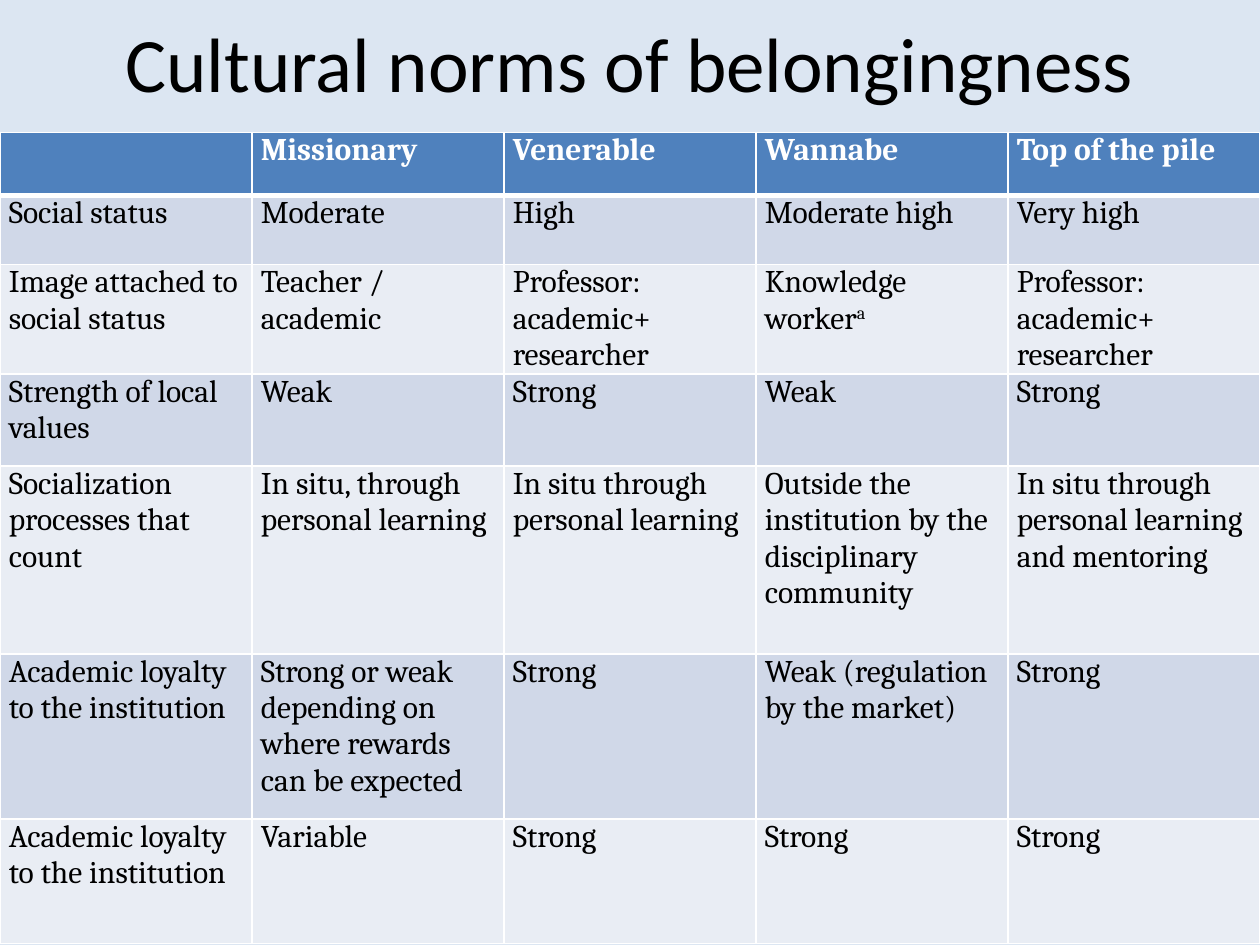
from lxml.etree import SubElement
from pptx import Presentation
from pptx.dml.color import RGBColor
from pptx.enum.text import MSO_ANCHOR, PP_ALIGN
from pptx.oxml.ns import qn
from pptx.util import Inches, Pt

TITLE = "Cultural norms of belongingness"
HEADER = ["", "Missionary", "Venerable", "Wannabe", "Top of the pile"]
# "^" starts a superscript
BODY = [
    ["Social status", "Moderate", "High", "Moderate high", "Very high"],
    ["Image attached to social status", "Teacher / academic",
     "Professor: academic+ researcher", "Knowledge worker^a",
     "Professor: academic+ researcher"],
    ["Strength of local values", "Weak", "Strong", "Weak", "Strong"],
    ["Socialization processes that count", "In situ, through personal learning",
     "In situ through personal learning",
     "Outside the institution by the disciplinary community",
     "In situ through personal learning and mentoring"],
    ["Academic loyalty to the institution",
     "Strong or weak depending on where rewards can be expected",
     "Strong", "Weak (regulation by the market)", "Strong"],
    ["Academic loyalty to the institution", "Variable", "Strong", "Strong", "Strong"],
]
ROWS = [HEADER] + BODY
ROW_HEIGHTS = [0.5, 0.55, 0.87, 0.73, 1.49, 1.31, 0.99]
COLUMN_WIDTH = 2

BACKGROUND = RGBColor(0xDC, 0xE6, 0xF2)
HEADER_BLUE = RGBColor(0x4F, 0x81, 0xBD)
BANDS = [RGBColor(0xD0, 0xD8, 0xE8), RGBColor(0xE9, 0xED, 0xF4)]
WHITE = RGBColor(0xFF, 0xFF, 0xFF)
BLACK = RGBColor(0, 0, 0)


def add_text(paragraph, text, font="Cambria", size=18, color=BLACK, bold=False):
    """Add text to a paragraph, raising whatever follows a "^"."""
    for position, part in enumerate(text.split("^")):
        run = paragraph.add_run()
        run.text = part
        run.font.name = font
        run.font.size = Pt(size)
        run.font.color.rgb = color
        run.font.bold = bold
        if position:
            run.font._element.set("baseline", "30000")


def set_borders(cell, top=1, bottom=1):
    properties = cell._tc.get_or_add_tcPr()
    for side, width in (("L", 1), ("R", 1), ("T", top), ("B", bottom)):
        line = SubElement(properties, qn(f"a:ln{side}"), w=str(Pt(width)))
        fill = SubElement(line, qn("a:solidFill"))
        SubElement(fill, qn("a:srgbClr"), val=str(WHITE))


def add_title(slide):
    title = slide.shapes.title
    title.left, title.top = Inches(0.5), Inches(0)
    title.width, title.height = Inches(9), Inches(0.98)
    title.text_frame.vertical_anchor = MSO_ANCHOR.MIDDLE
    paragraph = title.text_frame.paragraphs[0]
    paragraph.alignment = PP_ALIGN.CENTER
    add_text(paragraph, TITLE, font="Calibri", size=44)


def add_norms_table(slide):
    table = slide.shapes.add_table(
        len(ROWS), len(HEADER), Inches(0), Inches(1.05),
        Inches(COLUMN_WIDTH * len(HEADER)), Inches(sum(ROW_HEIGHTS))).table
    for column in table.columns:
        column.width = Inches(COLUMN_WIDTH)
    for row_index, (texts, height) in enumerate(zip(ROWS, ROW_HEIGHTS)):
        table.rows[row_index].height = Inches(height)
        is_header = row_index == 0
        for column_index, text in enumerate(texts):
            cell = table.cell(row_index, column_index)
            cell.margin_left = cell.margin_right = Inches(0.07)
            cell.margin_top = cell.margin_bottom = Inches(0)
            set_borders(cell, top=3 if row_index == 1 else 1,
                        bottom=3 if is_header else 1)
            cell.fill.solid()
            cell.fill.fore_color.rgb = (
                HEADER_BLUE if is_header else BANDS[(row_index - 1) % 2])
            if text:
                add_text(cell.text_frame.paragraphs[0], text, bold=is_header,
                         color=WHITE if is_header else BLACK)


def main():
    presentation = Presentation()
    presentation.slide_width, presentation.slide_height = Inches(10), Inches(7.5)
    slide = presentation.slides.add_slide(presentation.slide_layouts[5])
    slide.background.fill.solid()
    slide.background.fill.fore_color.rgb = BACKGROUND
    add_title(slide)
    add_norms_table(slide)
    presentation.save("out.pptx")


if __name__ == "__main__":
    main()
